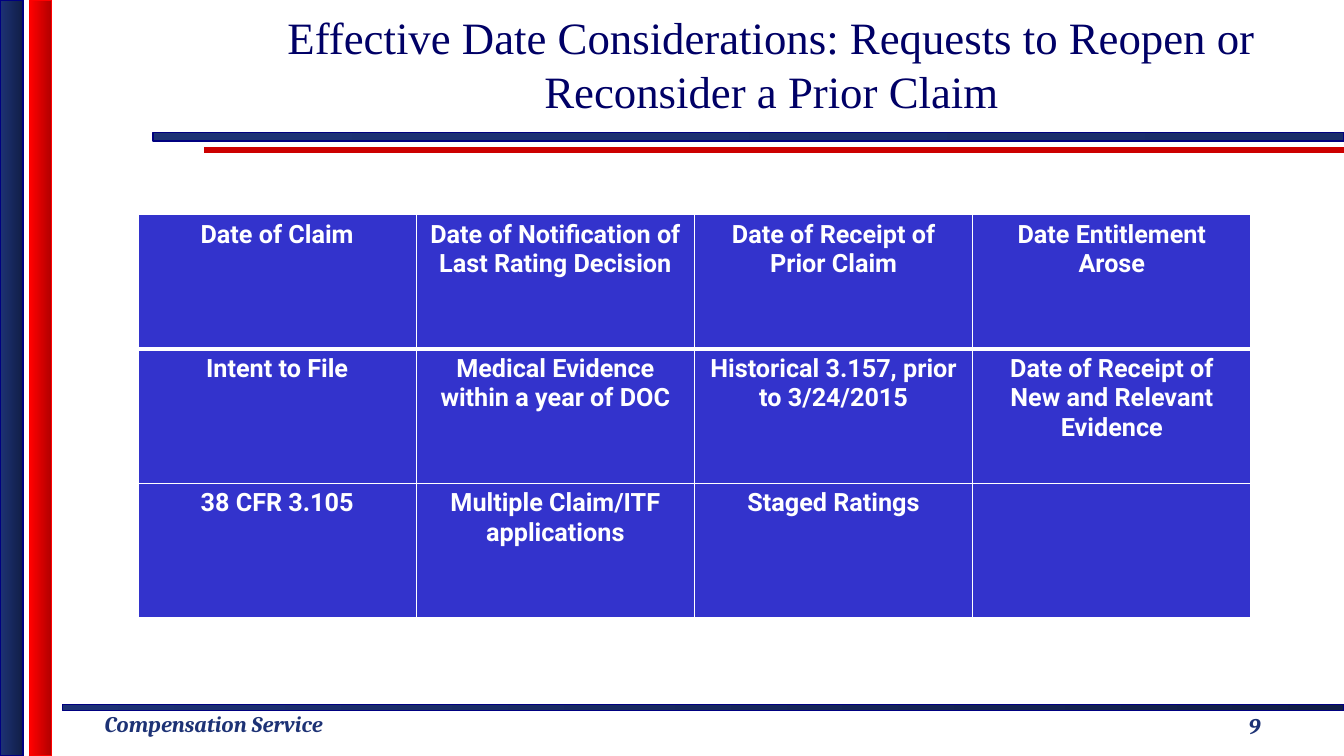
from lxml.etree import SubElement
from pptx import Presentation
from pptx.dml.color import RGBColor
from pptx.enum.shapes import MSO_CONNECTOR, MSO_SHAPE
from pptx.enum.text import MSO_ANCHOR, PP_ALIGN
from pptx.oxml.ns import qn
from pptx.util import Pt

WIDE, HIGH = 960, 540
NAVY, DEEP, EDGE = "1D3275", "111E46", "000080"
RED, WHITE, BLUE = "FF0000", "FFFFFF", "3333CC"

GRID = [
    ["Date of Claim", "Date of Notification of Last Rating Decision",
     "Date of Receipt of Prior Claim", "Date Entitlement Arose"],
    ["Intent to File", "Medical Evidence within a year of DOC",
     "Historical 3.157, prior to 3/24/2015",
     "Date of Receipt of New and Relevant Evidence"],
    ["38 CFR 3.105", "Multiple Claim/ITF applications", "Staged Ratings", ""],
]


def tint(code):
    return RGBColor.from_string(code)


def write(frame, text, font="Cambria", size=16, color=NAVY, bold=False,
          slant=False, align=PP_ALIGN.LEFT):
    para = frame.paragraphs[0]
    para.alignment = align
    run = para.add_run()
    run.text = text
    run.font.name = font
    run.font.size = Pt(size)
    run.font.bold = bold
    run.font.italic = slant
    run.font.color.rgb = tint(color)


class Deck:
    def __init__(self):
        self.show = Presentation()
        self.show.slide_width = Pt(WIDE)
        self.show.slide_height = Pt(HIGH)
        self.slide = self.show.slides.add_slide(self.show.slide_layouts[6])
        self.items = self.slide.shapes

    def line(self, left, right, top, color, width):
        rule = self.items.add_connector(
            MSO_CONNECTOR.STRAIGHT, Pt(left), Pt(top), Pt(right), Pt(top))
        rule.line.color.rgb = tint(color)
        rule.line.width = Pt(width)
        SubElement(rule._element.spPr, qn("a:effectLst"))

    def bar(self, left, top, width, height, start, end, edge):
        bar = self.items.add_shape(
            MSO_SHAPE.RECTANGLE, Pt(left), Pt(top), Pt(width), Pt(height))
        bar.shadow.inherit = False
        bar.fill.gradient()
        bar.fill.gradient_angle = 0
        for stop, color, place in zip(bar.fill.gradient_stops, (start, end), (0, 1)):
            stop.color.rgb = tint(color)
            stop.position = place
        bar.line.color.rgb = tint(edge)
        bar.line.width = Pt(1)

    def text(self, left, top, width, height, text, anchor=MSO_ANCHOR.MIDDLE,
             wrap=True, **style):
        box = self.items.add_textbox(Pt(left), Pt(top), Pt(width), Pt(height))
        frame = box.text_frame
        frame.word_wrap = wrap
        frame.vertical_anchor = anchor
        write(frame, text, **style)

    def edge(self, cell, side, width):
        line = SubElement(cell._tc.get_or_add_tcPr(), qn(f"a:ln{side}"), w=str(Pt(width)))
        fill = SubElement(line, qn("a:solidFill"))
        SubElement(fill, qn("a:srgbClr"), val=WHITE)

    def table(self, left, top, width, height, grid, **style):
        rows, cols = len(grid), len(grid[0])
        table = self.items.add_table(
            rows, cols, Pt(left), Pt(top), Pt(width), Pt(height)).table
        for r, row in enumerate(grid):
            for c, text in enumerate(row):
                cell = table.cell(r, c)
                edges = {"L": 1, "R": 1, "T": 3 if r == 1 else 1, "B": 3 if r == 0 else 1}
                for side, size in edges.items():
                    self.edge(cell, side, size)
                cell.fill.solid()
                cell.fill.fore_color.rgb = tint(BLUE)
                if text:
                    write(cell.text_frame, text, **style)


def main():
    deck = Deck()
    deck.line(146, WIDE, 107.3, "CC0000", 4)
    deck.bar(44.6, 503.3, 915.4, 4.3, NAVY, DEEP, EDGE)
    deck.bar(109.4, 94.5, 850.6, 6.3, NAVY, "1A2D69", EDGE)
    deck.bar(0, 0, 16.5, HIGH, NAVY, DEEP, EDGE)
    deck.bar(21.4, 0, 15.3, HIGH, RED, "B20000", RED)
    deck.text(67.7, 504, 203, 26.6, "Compensation Service",
              anchor=MSO_ANCHOR.TOP, wrap=False, bold=True, slant=True)
    deck.text(168.5, 0, 765.4, 90.7,
              "Effective Date Considerations: Requests to Reopen or Reconsider a Prior Claim",
              font="Times New Roman", size=32, color="000066", align=PP_ALIGN.CENTER)
    deck.table(98.6, 153.4, 795, 287.6, GRID, font="Roboto", size=18,
               color=WHITE, bold=True, align=PP_ALIGN.CENTER)
    deck.text(832.3, 500.4, 127.7, 36, "9", bold=True, slant=True,
              align=PP_ALIGN.CENTER)
    deck.show.save("out.pptx")


if __name__ == "__main__":
    main()
